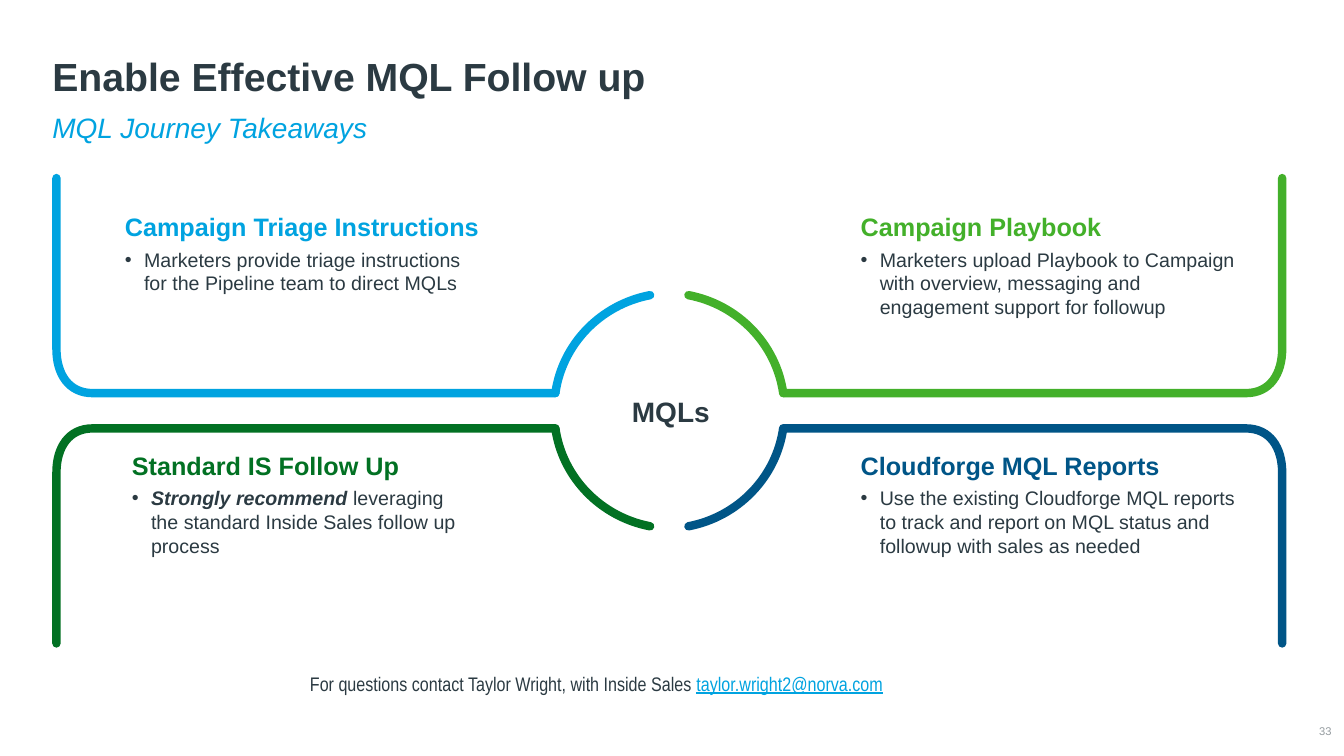
from dataclasses import dataclass

from lxml.etree import SubElement
from pptx import Presentation
from pptx.dml.color import RGBColor
from pptx.enum.shapes import MSO_SHAPE
from pptx.enum.text import MSO_ANCHOR, MSO_AUTO_SIZE, PP_ALIGN
from pptx.oxml.ns import qn
from pptx.util import Emu, Inches, Pt

WIDTH, HEIGHT = Inches(13.333), Inches(7.5)
COLS, ROWS = 160, 90
INK, SKY, GREY, WHITE = "2B3A42", "00A3E0", "959CA0", "FFFFFF"
CENTER = (79.68, 48.9)
RAIL = [(13.56, 2.1), (68.64, 2.1), (71.52, 2.1), (72.96, 4.4), (72.96, 7.36), (72.96, 27.7)]
ARC = [(13.56, 2.1), (12.72, 7.96), (8.16, 12.64), (2.28, 13.76)]


@dataclass
class Quadrant:
    """One takeaway: its side of the centre, text box and wording."""
    side: tuple[int, int]
    box: tuple[float, float, float, float]
    color: str
    heading: str
    body: str
    lead: str = ""


QUADRANTS = [
    Quadrant((-1, -1), (13.68, 24.6, 44.64, 15.84), SKY, "Campaign Triage Instructions",
             "Marketers provide triage instructions for the Pipeline team to direct MQLs"),
    Quadrant((-1, 1), (14.52, 53.04, 41.4, 15.84), "027123", "Standard IS Follow Up",
             "leveraging the standard Inside Sales follow up process", "Strongly recommend "),
    Quadrant((1, -1), (101.28, 24.6, 48.24, 15.84), "43B02A", "Campaign Playbook",
             "Marketers upload Playbook to Campaign with overview, messaging and "
             "engagement support for followup"),
    Quadrant((1, 1), (101.28, 53.04, 48.24, 15.84), "005587", "Cloudforge MQL Reports",
             "Use the existing Cloudforge MQL reports to track and report on MQL status "
             "and followup with sales as needed"),
]


def rgb(value: str) -> RGBColor:
    """Turn a hex string into a colour."""
    return RGBColor.from_string(value)


def col(n: float) -> Emu:
    """Return the length of n grid columns."""
    return Emu(round(WIDTH * n / COLS))


def row(n: float) -> Emu:
    """Return the length of n grid rows."""
    return Emu(round(HEIGHT * n / ROWS))


def place(box: tuple) -> tuple:
    """Turn a grid box into left, top, width and height."""
    x, y, w, h = box
    return col(x), row(y), col(w), row(h)


def add_run(p, text: str, size: float = 14, color: str = INK, font: str = "Arial",
            bold: bool = False, italic: bool = False, underline: bool = False) -> None:
    """Add formatted text to a paragraph."""
    r = p.add_run()
    r.text = text
    f = r.font
    f.size, f.name, f.bold, f.italic, f.underline = Pt(size), font, bold, italic, underline
    f.color.rgb = rgb(color)


def add_box(s, box: tuple, anchor=MSO_ANCHOR.TOP, inset: bool = True):
    """Add a wrapping text box and return its text frame."""
    tf = s.shapes.add_textbox(*place(box)).text_frame
    tf.word_wrap, tf.vertical_anchor = True, anchor
    if not inset:
        tf.margin_left = tf.margin_right = tf.margin_top = tf.margin_bottom = 0
    return tf


def set_bullet(p) -> None:
    """Give a paragraph a hanging round bullet."""
    pPr = p._p.get_or_add_pPr()
    pPr.set("marL", str(Inches(0.19)))
    pPr.set("indent", str(-Inches(0.19)))
    SubElement(pPr, qn("a:buFont")).set("typeface", "Arial")
    SubElement(pPr, qn("a:buChar")).set("char", "•")


def bend(sp, first: int) -> None:
    """Merge three line segments, from the given one on, into a cubic curve."""
    cubic, *others = list(sp._element.iter(qn("a:lnTo")))[first:first + 3]
    cubic.tag = qn("a:cubicBezTo")
    for line in others:
        cubic.append(line[0])
        line.getparent().remove(line)


def add_stroke(s, q: Quadrant, offsets: list, first: int) -> None:
    """Draw a rounded stroke mirrored to the quadrant's side."""
    (cx, cy), (dx, dy) = CENTER, q.side
    start, *rest = [(col(cx + dx * x), row(cy + dy * y)) for x, y in offsets]
    builder = s.shapes.build_freeform(*start)
    builder.add_line_segments(rest, close=False)
    sp = builder.convert_to_shape()
    bend(sp, first)
    sp.shadow.inherit = False
    sp.fill.background()
    sp.line.color.rgb, sp.line.width = rgb(q.color), Pt(6)
    ln = sp.line._get_or_add_ln()
    ln.set("cap", "rnd")
    SubElement(ln, qn("a:round"))


def add_card(s, q: Quadrant) -> None:
    """Write a quadrant's heading and bullet."""
    tf = add_box(s, q.box)
    add_run(tf.paragraphs[0], q.heading, size=18, color=q.color, bold=True)
    p = tf.add_paragraph()
    set_bullet(p)
    p.space_before = Pt(4)
    if q.lead:
        add_run(p, q.lead, bold=True, italic=True)
    add_run(p, q.body)


def add_disc(s) -> None:
    """Draw the white disc at the hub."""
    sp = s.shapes.add_shape(MSO_SHAPE.OVAL, *place((66.12, 35.16, 27.36, 27.36)))
    sp.shadow.inherit = False
    sp.fill.solid()
    sp.fill.fore_color.rgb = rgb(WHITE)
    sp.line.fill.background()


def add_hub_label(s) -> None:
    """Write the central label."""
    p = add_box(s, (73.32, 46.32, 13.08, 5.28)).paragraphs[0]
    p.alignment = PP_ALIGN.CENTER
    add_run(p, "MQLs", size=20, bold=True)


def add_header(s) -> None:
    """Format the title and add the subtitle."""
    title = s.shapes.title
    title.left, title.top, title.width, title.height = place((5.04, 2.4, 148.8, 10.08))
    tf = title.text_frame
    tf.auto_size, tf.vertical_anchor, tf.word_wrap = MSO_AUTO_SIZE.NONE, MSO_ANCHOR.BOTTOM, True
    p = tf.paragraphs[0]
    p.alignment, p.line_spacing = PP_ALIGN.LEFT, 0.9
    add_run(p, "Enable Effective MQL Follow up", size=28, bold=True)
    p = add_box(s, (5.04, 13.02, 148.8, 5.28)).paragraphs[0]
    p.line_spacing = 0.9
    add_run(p, "MQL Journey Takeaways", size=20, color=SKY, italic=True)


def add_footer(s) -> None:
    """Add the contact line and the page number."""
    p = add_box(s, (35.72, 78.12, 87.48, 5.28), MSO_ANCHOR.BOTTOM).paragraphs[0]
    add_run(p, "For questions contact Taylor Wright, with Inside Sales ", font="Arial Narrow")
    add_run(p, "taylor.wright2@norva.com", color=SKY, font="Arial Narrow", underline=True)
    p = add_box(s, (153.84, 85.92, 4.68, 2.28), MSO_ANCHOR.MIDDLE, inset=False).paragraphs[0]
    p.alignment = PP_ALIGN.RIGHT
    add_run(p, "33", size=8, color=GREY)


def main() -> None:
    """Build the slide and save it."""
    prs = Presentation()
    prs.slide_width, prs.slide_height = WIDTH, HEIGHT
    s = prs.slides.add_slide(prs.slide_layouts[5])
    add_header(s)
    add_footer(s)
    add_disc(s)
    for q in QUADRANTS:
        add_card(s, q)
    add_hub_label(s)
    for q in QUADRANTS:
        add_stroke(s, q, RAIL, 1)
        add_stroke(s, q, ARC, 0)
    prs.save("out.pptx")


if __name__ == "__main__":
    main()
